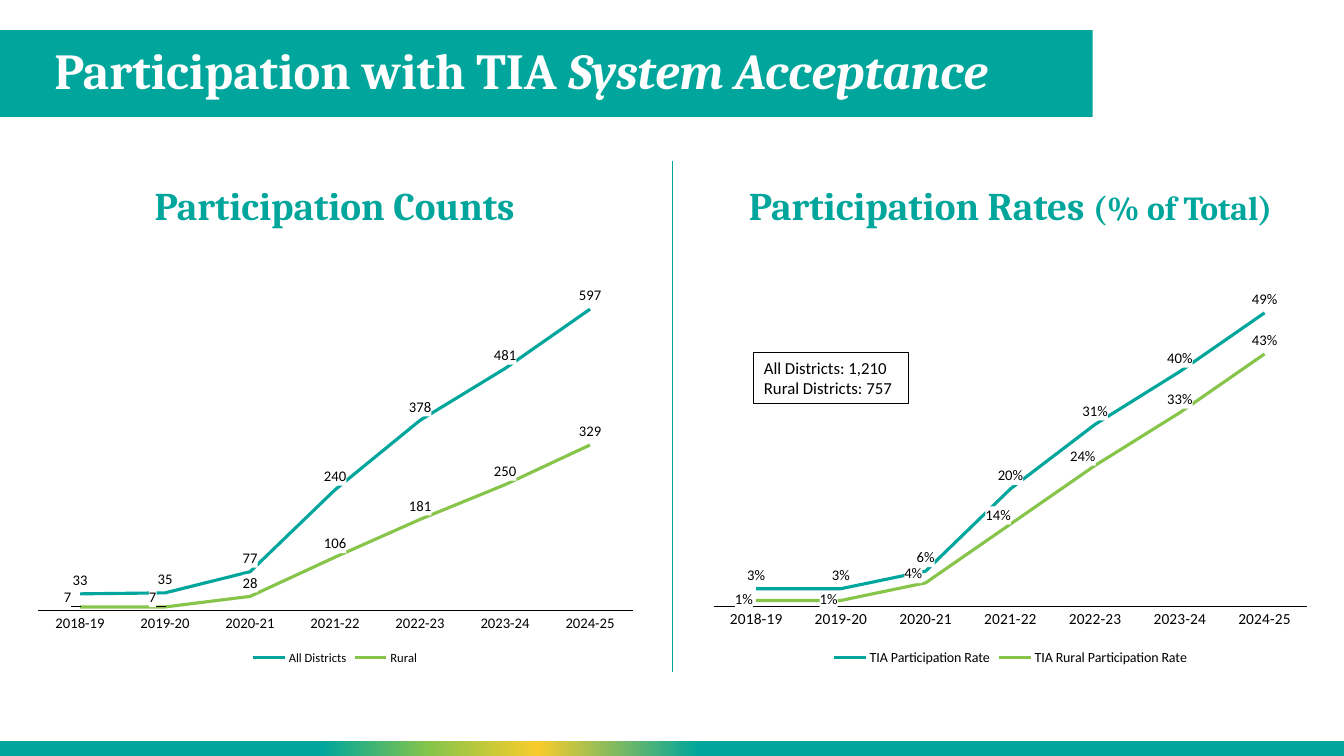
import pptx
import pptx.chart.data
import pptx.dml.color
import pptx.enum.chart
import pptx.enum.shapes
import pptx.enum.text
import pptx.oxml
import pptx.oxml.ns
import pptx.util

Pt = pptx.util.Pt
qn = pptx.oxml.ns.qn
ANCHOR = pptx.enum.text.MSO_ANCHOR
ALIGN = pptx.enum.text.PP_ALIGN

COLORS = {"teal": "00A69B", "green": "87C54A", "yellow": "F8CC2B",
          "white": "FFFFFF", "black": "000000"}
BAR_STOPS = [(0, "teal"), (24, "teal"), (32, "green"),
             (40, "yellow"), (52, "teal"), (100, "teal")]

# Each paragraph is a list of (text, run format) pairs.
TITLE = [[("Participation with TIA ", {}), ("System Acceptance", {"italic": True})]]
HEADINGS = [
    {"box": (36, 102.24, 406.08, 64.8), "text": [[("Participation Counts", {})]]},
    {"box": (517.68, 102.24, 408.24, 64.8),
     "text": [[("Participation Rates ", {}), ("(% of Total)", {"size": 24})]]},
]
DISTRICT_TOTALS = [[("All Districts: 1,210", {})], [("Rural Districts: 757", {})]]

YEARS = ["2018-19", "2019-20", "2020-21", "2021-22", "2022-23", "2023-24", "2024-25"]
# "moved" holds label offsets as fractions of the chart, by point number.
CHARTS = [
    {"box": (18, 178.56, 442.8, 299.52), "plot": (0.02, 0.02, 0.96, 0.84),
     "maximum": 700, "format": "General", "axis_size": 10.5, "legend_size": 9,
     "series": [
         {"name": "All Districts", "color": "teal",
          "values": [33, 35, 77, 240, 378, 481, 599],
          "moved": {}, "texts": {6: "597"}},
         {"name": "Rural", "color": "green",
          "values": [7, 7, 28, 106, 181, 250, 329],
          "moved": {0: (-0.02, 0.01), 1: (-0.02, 0.01)}, "texts": {}},
     ]},
    {"box": (501.12, 178.56, 441.36, 299.52), "plot": (0.02, 0.01, 0.96, 0.84),
     "maximum": 0.6, "format": "0%", "axis_size": 11, "legend_size": 10,
     "series": [
         {"name": "TIA Participation Rate", "color": "teal",
          "values": [0.03, 0.03, 0.06, 0.2, 0.31, 0.4, 0.5],
          "moved": {}, "texts": {6: "49%"}},
         {"name": "TIA Rural Participation Rate", "color": "green",
          "values": [0.01, 0.01, 0.04, 0.14, 0.24, 0.33, 0.43],
          "moved": {0: (-0.02, 0.03), 1: (-0.02, 0.03), 2: (-0.02, 0.01),
                    3: (-0.02, 0.01), 4: (-0.02, 0.01)}, "texts": {}},
     ]},
]


def rgb(name):
    return pptx.dml.color.RGBColor.from_string(COLORS[name])


def element(xml):
    """Parse one XML element that uses the a: and c: prefixes."""
    head, mark, rest = xml.partition(">")
    slash = "/" if head.endswith("/") else ""
    head = head[:-1] if slash else head
    return pptx.oxml.parse_xml(f'{head} {pptx.oxml.ns.nsdecls("a", "c")}{slash}{mark}{rest}')


def set_font(font, size, color="black", name="Calibri", bold=False, italic=False):
    font.size, font.name, font.bold, font.italic = Pt(size), name, bold, italic
    font.color.rgb = rgb(color)


def write_text(shape, paragraphs, anchor=ANCHOR.MIDDLE, align=ALIGN.LEFT,
               spacing=1.0, **font):
    frame = shape.text_frame
    frame.word_wrap = True
    frame.vertical_anchor = anchor
    for number, runs in enumerate(paragraphs):
        paragraph = frame.add_paragraph() if number else frame.paragraphs[0]
        paragraph.alignment = align
        paragraph.line_spacing = spacing
        for text, changes in runs:
            run = paragraph.add_run()
            run.text = text
            set_font(run.font, **{**font, **changes})


def add_rectangle(slide, box, fill=None, line=None):
    shape = slide.shapes.add_shape(
        pptx.enum.shapes.MSO_SHAPE.RECTANGLE, *map(Pt, box))
    shape.shadow.inherit = False
    if fill:
        shape.fill.solid()
        shape.fill.fore_color.rgb = rgb(fill)
    else:
        shape.fill.background()
    if line:
        shape.line.color.rgb = rgb(line)
        shape.line.width = Pt(0.75)
    else:
        shape.line.fill.background()
    return shape


def add_gradient_bar(slide, box):
    bar = add_rectangle(slide, box, "teal")
    stops = "".join(f'<a:gs pos="{position * 1000}"><a:srgbClr val="{COLORS[color]}"/></a:gs>'
                    for position, color in BAR_STOPS)
    solid = bar._element.spPr.find(qn("a:solidFill"))
    solid.getparent().replace(solid, element(
        f'<a:gradFill><a:gsLst>{stops}</a:gsLst><a:lin ang="0" scaled="0"/></a:gradFill>'))


def add_divider(slide, x, top, bottom):
    divider = slide.shapes.add_connector(
        pptx.enum.shapes.MSO_CONNECTOR.STRAIGHT, Pt(x), Pt(top), Pt(x), Pt(bottom))
    divider.line.color.rgb = rgb("teal")
    divider.line.width = Pt(0.5)
    divider._element.spPr.append(element("<a:effectLst/>"))


def manual_layout(**values):
    parts = "".join(f'<c:{key} val="{value}"/>' for key, value in values.items())
    return element(f"<c:layout><c:manualLayout>{parts}</c:manualLayout></c:layout>")


def add_label_format(label, xml):
    """Insert an element where the schema wants it: before font and position."""
    following = next(item for item in label
                     if item.tag in (qn("c:txPr"), qn("c:dLblPos")))
    following.addprevious(element(xml))


def fill_label_white(label):
    add_label_format(label, f'<c:spPr><a:solidFill><a:srgbClr val="{COLORS["white"]}"/>'
                            '</a:solidFill></c:spPr>')


def label_series(series, content, number_format):
    """Put values above the line, then shift or reword single labels."""
    above = pptx.enum.chart.XL_LABEL_POSITION.ABOVE
    labels = series.data_labels
    labels.show_value = True
    labels.number_format = number_format
    labels.number_format_is_linked = False
    labels.position = above
    set_font(labels.font, 10.5)
    fill_label_white(labels._element)
    for number in sorted({*content["moved"], *content["texts"]}):
        label = series.points[number].data_label
        label.position = above
        if number in content["texts"]:
            run = label.text_frame.paragraphs[0].add_run()
            run.text = content["texts"][number]
            set_font(run.font, 10.5)
        else:
            set_font(label.font, 10.5)
        node = next(item for item in labels._element.findall(qn("c:dLbl"))
                    if item.find(qn("c:idx")).get("val") == str(number))
        add_label_format(node, f'<c:numFmt formatCode="{number_format}" sourceLinked="0"/>')
        fill_label_white(node)
        if number in content["moved"]:
            x, y = content["moved"][number]
            node.find(qn("c:idx")).addnext(manual_layout(x=x, y=y))


def add_line_chart(slide, content):
    data = pptx.chart.data.CategoryChartData(number_format=content["format"])
    data.categories = YEARS
    for row in content["series"]:
        data.add_series(row["name"], row["values"])
    chart = slide.shapes.add_chart(pptx.enum.chart.XL_CHART_TYPE.LINE,
                                   *map(Pt, content["box"]), data).chart
    set_font(chart.font, 10)
    chart.has_title = False
    chart.has_legend = True
    chart.legend.position = pptx.enum.chart.XL_LEGEND_POSITION.BOTTOM
    chart.legend.include_in_layout = False
    set_font(chart.legend.font, content["legend_size"])

    values, years = chart.value_axis, chart.category_axis
    values.minimum_scale, values.maximum_scale = 0, content["maximum"]
    values.has_major_gridlines = False
    values.visible = False
    years.major_tick_mark = pptx.enum.chart.XL_TICK_MARK.NONE
    years.format.line.color.rgb = rgb("black")
    years.format.line.width = Pt(0.75)
    set_font(years.tick_labels.font, content["axis_size"])

    plot = chart.plots[0]
    plot.vary_by_categories = False
    for series, row in zip(plot.series, content["series"]):
        series.smooth = False
        series.marker.style = pptx.enum.chart.XL_MARKER_STYLE.NONE
        series.format.line.color.rgb = rgb(row["color"])
        series.format.line.width = Pt(2.25)
        label_series(series, row, content["format"])

    area = chart._chartSpace.find(f'{qn("c:chart")}/{qn("c:plotArea")}')
    for layout in area.findall(qn("c:layout")):
        area.remove(layout)
    x, y, w, h = content["plot"]
    area.insert(0, manual_layout(layoutTarget="inner", xMode="edge", yMode="edge",
                                 x=x, y=y, w=w, h=h))


def main():
    presentation = pptx.Presentation()
    presentation.slide_width, presentation.slide_height = Pt(960), Pt(540)
    slide = presentation.slides.add_slide(presentation.slide_layouts[6])
    add_rectangle(slide, (0, 21.6, 780.5, 61.92), "teal")
    add_gradient_bar(slide, (0, 529.2, 960, 10.8))
    add_divider(slide, 480, 115.2, 480)
    title = slide.shapes.add_textbox(*map(Pt, (31.68, 20.88, 723.6, 62.64)))
    write_text(title, TITLE, spacing=0.9, size=36, color="white", name="Cambria", bold=True)
    for heading in HEADINGS:
        box = slide.shapes.add_textbox(*map(Pt, heading["box"]))
        write_text(box, heading["text"], anchor=ANCHOR.BOTTOM, align=ALIGN.CENTER,
                   spacing=0.9, size=28, color="teal", name="Cambria", bold=True)
    for content in CHARTS:
        add_line_chart(slide, content)
    totals = add_rectangle(slide, (538.56, 252, 110.16, 36), line="black")
    write_text(totals, DISTRICT_TOTALS, anchor=ANCHOR.TOP, size=12)
    presentation.save("out.pptx")


if __name__ == "__main__":
    main()
